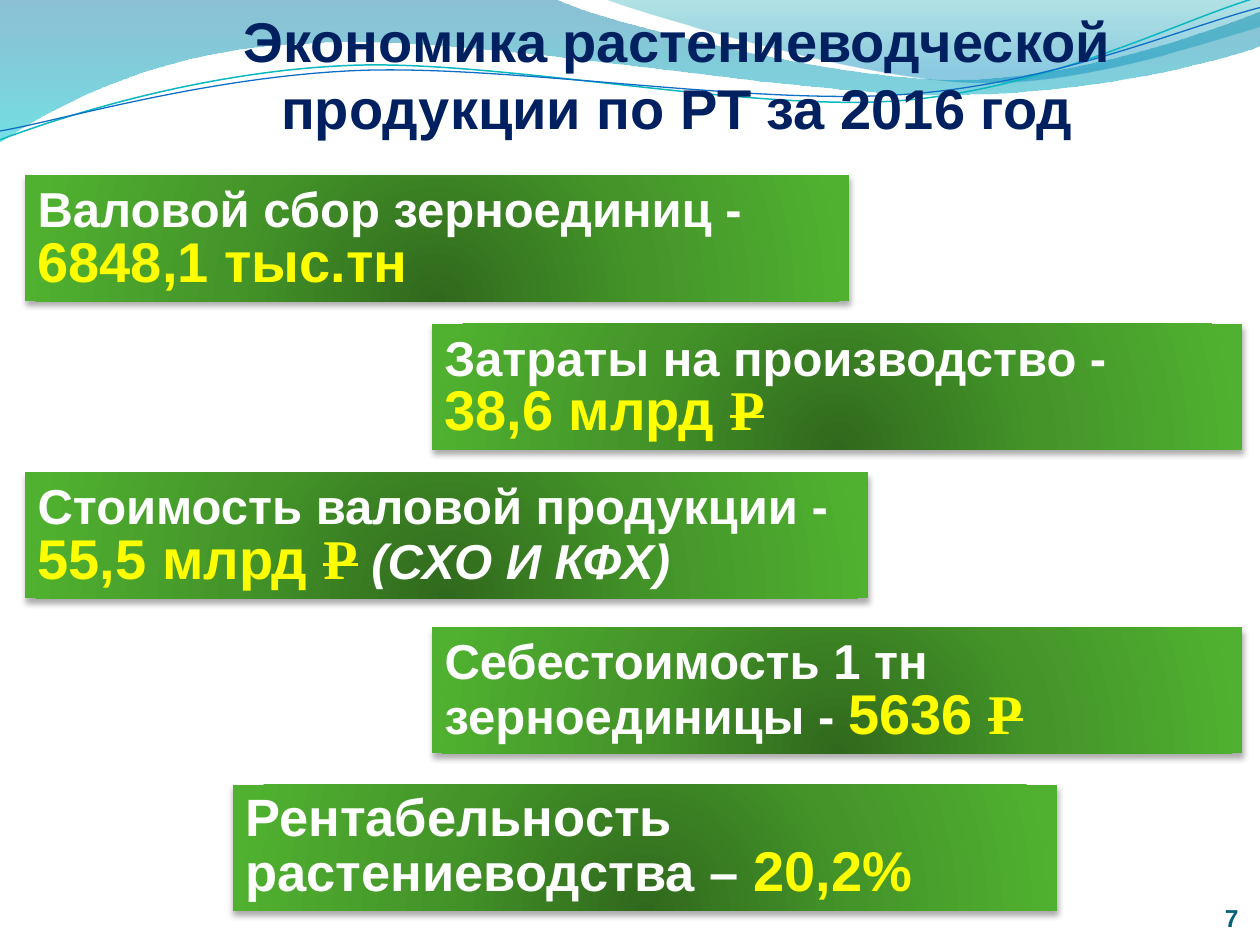
from dataclasses import dataclass
from math import cos, radians, sin
from typing import NamedTuple

from lxml.etree import SubElement
from pptx import Presentation
from pptx.dml.color import RGBColor
from pptx.enum.shapes import MSO_SHAPE
from pptx.enum.text import MSO_ANCHOR, MSO_AUTO_SIZE, PP_ALIGN
from pptx.oxml.ns import qn
from pptx.util import Inches, Pt

WHITE = RGBColor(0xFF, 0xFF, 0xFF)
YELLOW = RGBColor(0xFF, 0xFF, 0x00)
BLACK = RGBColor(0x00, 0x00, 0x00)
NAVY = RGBColor(0x00, 0x20, 0x60)
PAGE_TEAL = RGBColor(0x04, 0x61, 0x7B)
AQUA_LINE = RGBColor(0x0A, 0xB8, 0xBF)
BLUE_LINE = RGBColor(0x0F, 0x6F, 0xC6)


class Stop(NamedTuple):
    position: int
    color: RGBColor
    opacity: int = 100


class Span(NamedTuple):
    text: str
    size: int = 28
    color: RGBColor = WHITE
    font: str = "Arial"
    italic: bool = False
    strike: bool = False


@dataclass
class Panel:
    left: float
    top: float
    width: float
    lines: list[list[Span]]


@dataclass
class Wave:
    """Start point, then lines (2 numbers) and Bezier curves (6 numbers), as seen on the slide."""
    box: tuple
    start: tuple
    segments: list[tuple]
    stops: list[Stop] | None = None
    line_color: RGBColor | None = None
    line_width: float = 0
    rotation: float = 0


GREEN_STOPS = [Stop(0, RGBColor(0x30, 0x69, 0x1D)), Stop(50, RGBColor(0x44, 0x95, 0x29)),
               Stop(100, RGBColor(0x50, 0xB1, 0x30))]
RUBLE = Span("Р", 32, YELLOW, "Times New Roman", strike=True)

WAVES = [
    Wave((-0.01, -0.01, 10.02, 1.14), (0, 0),
         [(4.4, -0.01), (4.76, 0.17, 6.64, 0.63, 7.58, 0.63),
          (8.53, 0.63, 9.58, 0.26, 10, 0.09), (10.01, 0.36),
          (9.83, 0.44, 8.7, 0.76, 7.46, 0.75), (6.22, 0.75, 3.82, 0.28, 2.57, 0.34),
          (1.29, 0.36, 0.46, 0.83, -0.01, 1.13), (0, 0)],
         stops=[Stop(0, RGBColor(0x00, 0x74, 0xA1), 45), Stop(100, RGBColor(0x00, 0xC6, 0xCF), 55)]),
    Wave((4.79, -0.01, 5.21, 0.7), (4.79, -0.01),
         [(5.09, 0.11, 6.82, 0.62, 7.69, 0.65), (8.56, 0.69, 9.61, 0.32, 10, 0.21),
          (10, 0), (4.79, -0.01)],
         stops=[Stop(0, RGBColor(0x00, 0xA1, 0xA9), 30), Stop(80, RGBColor(0x00, 0x8B, 0xBF), 45)]),
    Wave((-0.02, 0.22, 10.02, 0.71), (0, 1.11),
         [(0.48, 0.93, 1.58, 0.57, 2.77, 0.52), (3.95, 0.47, 5.93, 0.89, 7.13, 0.8),
          (8.33, 0.71, 9.38, 0.15, 9.98, -0.02)],
         line_color=AQUA_LINE, line_width=0.85, rotation=357.3),
    Wave((-0.02, 0.3, 10.03, 0.58), (0, 1.04),
         [(0.47, 0.96, 1.64, 0.61, 2.83, 0.56), (4.03, 0.51, 5.97, 0.84, 7.17, 0.75),
          (8.36, 0.67, 9.41, 0.21, 10, 0.06)],
         line_color=BLUE_LINE, line_width=0.75, rotation=357.3),
]

PANELS = [
    Panel(0.2, 1.39, 6.54, [[Span("Валовой сбор зерноединиц -")],
                            [Span("6848,1 тыс.тн", 32, YELLOW)]]),
    Panel(0.2, 3.75, 6.69, [[Span("Стоимость валовой продукции - "),
                             Span("55,5 млрд ", 32, YELLOW), RUBLE, Span(" "),
                             Span("(СХО И КФХ)", italic=True)]]),
    Panel(3.43, 2.57, 6.43, [[Span("Затраты на производство -")],
                             [Span("38,6 млрд ", 32, YELLOW), RUBLE]]),
    Panel(3.43, 4.98, 6.43, [[Span("Себестоимость 1 тн")],
                             [Span("зерноединицы - "), Span("5636 ", 32, YELLOW), RUBLE]]),
    Panel(1.85, 6.23, 6.54, [[Span("Рентабельность", 30)],
                             [Span("растениеводства – ", 30), Span("20,2%", 32, YELLOW)]]),
]


def add_color(parent, color: RGBColor, opacity: int) -> None:
    element = SubElement(parent, qn("a:srgbClr"), val=str(color))
    if opacity < 100:
        SubElement(element, qn("a:alpha"), val=str(opacity * 1000))


def set_gradient(shape, stops: list[Stop], radial: bool = False) -> None:
    """Fill downwards, or in circles around the middle of the bottom edge."""
    shape.fill.background()
    blank = shape._element.spPr.find(qn("a:noFill"))
    gradient = SubElement(shape._element.spPr, qn("a:gradFill"), rotWithShape="1")
    blank.getparent().replace(blank, gradient)
    stop_list = SubElement(gradient, qn("a:gsLst"))
    for stop in stops:
        element = SubElement(stop_list, qn("a:gs"), pos=str(stop.position * 1000))
        add_color(element, stop.color, stop.opacity)
    if radial:
        circle = SubElement(gradient, qn("a:path"), {"path": "circle"})
        SubElement(circle, qn("a:fillToRect"), l="50000", t="100000", r="50000", b="0")
    else:
        SubElement(gradient, qn("a:lin"), ang="5400000", scaled="0")


def add_shadow(shape) -> None:
    shape.shadow.inherit = False
    effects = shape._element.spPr.find(qn("a:effectLst"))
    shadow = SubElement(effects, qn("a:outerShdw"), blurRad=str(Pt(3.5)), dist=str(Pt(2.2)),
                        dir="5400000", rotWithShape="0")
    add_color(shadow, BLACK, 32)


def to_local(wave: Wave, x: float, y: float) -> tuple[int, int]:
    """Place of a slide point inside the box before the box is rotated."""
    left, top, width, height = wave.box
    dx, dy = x - left - width / 2, y - top - height / 2
    angle = radians(-wave.rotation)
    return (Inches(width / 2 + dx * cos(angle) - dy * sin(angle)),
            Inches(height / 2 + dx * sin(angle) + dy * cos(angle)))


def shape_outline(shape, wave: Wave) -> None:
    """Fit the outline to the wave's box and bend its segments into Bezier curves."""
    shape.left, shape.top, shape.width, shape.height = map(Inches, wave.box)
    shape.rotation = wave.rotation
    outline = next(shape._element.spPr.iter(qn("a:path")))
    outline.set("w", str(shape.width))
    outline.set("h", str(shape.height))
    for command, numbers in zip(list(outline), [wave.start, *wave.segments]):
        for point in list(command):
            command.remove(point)
        if len(numbers) == 6:
            command.tag = qn("a:cubicBezTo")
        for x, y in zip(numbers[::2], numbers[1::2]):
            local_x, local_y = to_local(wave, x, y)
            SubElement(command, qn("a:pt"), x=str(local_x), y=str(local_y))


def draw_wave(slide, wave: Wave) -> None:
    builder = slide.shapes.build_freeform(*map(Inches, wave.start))
    builder.add_line_segments([tuple(map(Inches, segment[-2:])) for segment in wave.segments],
                              close=wave.stops is not None)
    shape = builder.convert_to_shape()
    shape_outline(shape, wave)
    shape.shadow.inherit = False
    if wave.stops:
        set_gradient(shape, wave.stops)
        shape.line.fill.background()
    else:
        shape.fill.background()
        shape.line.color.rgb = wave.line_color
        shape.line.width = Pt(wave.line_width)


def add_span(paragraph, span: Span) -> None:
    run = paragraph.add_run()
    run.text = span.text
    font = run.font
    font.name, font.size, font.bold, font.italic = span.font, Pt(span.size), True, span.italic
    font.color.rgb = span.color
    if span.strike:
        run._r.get_or_add_rPr().set("strike", "sngStrike")


def draw_panel(slide, panel: Panel) -> None:
    shape = slide.shapes.add_shape(MSO_SHAPE.RECTANGLE, Inches(panel.left), Inches(panel.top),
                                   Inches(panel.width), Inches(1))
    set_gradient(shape, GREEN_STOPS, radial=True)
    shape.line.fill.background()
    add_shadow(shape)
    frame = shape.text_frame
    frame.word_wrap = True
    frame.auto_size = MSO_AUTO_SIZE.SHAPE_TO_FIT_TEXT
    frame.vertical_anchor = MSO_ANCHOR.TOP
    for index, line in enumerate(panel.lines):
        paragraph = frame.add_paragraph() if index else frame.paragraphs[0]
        paragraph.alignment = PP_ALIGN.LEFT
        paragraph.line_spacing = Pt(32)
        for span in line:
            add_span(paragraph, span)


def add_label(slide, box: tuple, span: Span, alignment: PP_ALIGN):
    frame = slide.shapes.add_textbox(*map(Inches, box)).text_frame
    frame.word_wrap = True
    frame.paragraphs[0].alignment = alignment
    add_span(frame.paragraphs[0], span)
    return frame


def main() -> None:
    presentation = Presentation()
    presentation.slide_width, presentation.slide_height = Inches(10), Inches(7.5)
    slide = presentation.slides.add_slide(presentation.slide_layouts[6])
    for wave in WAVES:
        draw_wave(slide, wave)
    for panel in PANELS:
        draw_panel(slide, panel)
    title = Span("Экономика растениеводческой продукции по РТ за 2016 год", 32, NAVY)
    heading = add_label(slide, (0.75, 0, 9.25, 1.18), title, PP_ALIGN.CENTER)
    heading.auto_size = MSO_AUTO_SIZE.SHAPE_TO_FIT_TEXT
    number = add_label(slide, (9.35, 7, 0.48, 0.4), Span("7", 14, PAGE_TEAL), PP_ALIGN.RIGHT)
    number.vertical_anchor = MSO_ANCHOR.BOTTOM
    number.margin_left = number.margin_right = number.margin_top = number.margin_bottom = 0
    presentation.save("out.pptx")


if __name__ == "__main__":
    main()
